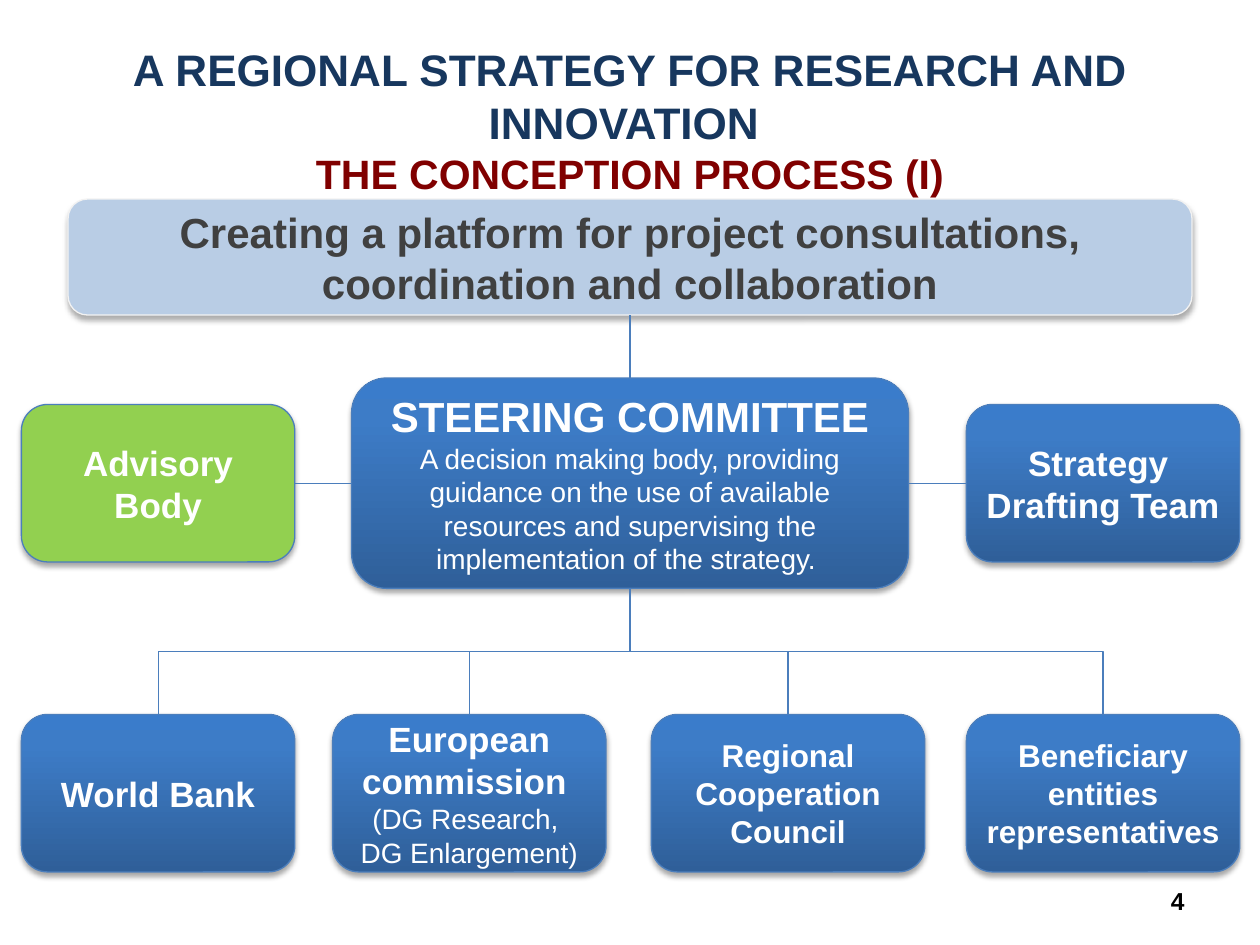
import copy

import pptx
import pptx.dml.color
import pptx.enum.shapes
import pptx.enum.text
import pptx.oxml.ns
import pptx.util
from lxml import etree

RGBColor = pptx.dml.color.RGBColor
Inches = pptx.util.Inches
Pt = pptx.util.Pt
qn = pptx.oxml.ns.qn
Align = pptx.enum.text.PP_ALIGN
Connector = pptx.enum.shapes.MSO_CONNECTOR

WHITE = RGBColor(0xFF, 0xFF, 0xFF)
BLACK = RGBColor(0, 0, 0)
NAVY = RGBColor(0x17, 0x37, 0x5E)
MAROON = RGBColor(0x80, 0, 0)
CHARCOAL = RGBColor(0x40, 0x40, 0x40)
PALE_BLUE = RGBColor(0xB9, 0xCD, 0xE5)
PALE_GREY = RGBColor(0xF2, 0xF2, 0xF2)
GREEN = RGBColor(0x92, 0xD0, 0x50)
LINE_BLUE = RGBColor(0x4B, 0x7E, 0xBC)
BLUE_STOPS = [
    (0, RGBColor(0x2F, 0x5F, 0x99)),
    (0.8, RGBColor(0x3D, 0x7C, 0xC7)),
    (1, RGBColor(0x3A, 0x7C, 0xCB)),
]

SLIDE_WIDTH, SLIDE_HEIGHT = 10, 7.5
COLUMNS = [0.17, 2.64, 5.17, 7.67]
MIDDLE_ROW, BOTTOM_ROW = 3.21, 5.67
BOX_WIDTH, BOX_HEIGHT = 2.17, 1.25
TOP, LEFT, BOTTOM, RIGHT = range(4)


def add_text(paragraph, text, size=20, color=WHITE, bold=True):
    """Append text to a paragraph; each newline becomes a line break."""
    for index, line in enumerate(text.split("\n")):
        if index:
            paragraph.add_line_break()
        if line:
            run = paragraph.add_run()
            run.text = line
            run.font.name = "Arial"
            run.font.size = Pt(size)
            run.font.bold = bold
            run.font.color.rgb = color


def first_paragraph(shape, align=Align.CENTER):
    frame = shape.text_frame
    frame.word_wrap = True
    frame.vertical_anchor = pptx.enum.text.MSO_ANCHOR.MIDDLE
    frame.paragraphs[0].alignment = align
    return frame.paragraphs[0]


def add_shadow(shape, opacity, blur, distance):
    shape.shadow.inherit = False
    effects = shape._element.spPr.find(qn("a:effectLst"))
    shadow = etree.SubElement(
        effects, qn("a:outerShdw"), blurRad=str(Pt(blur)),
        dist=str(Pt(distance)), dir="5400000", rotWithShape="0")
    color = etree.SubElement(shadow, qn("a:srgbClr"), val="000000")
    etree.SubElement(color, qn("a:alpha"), val=str(opacity * 1000))


def fill_gradient(shape):
    shape.fill.gradient()
    shape.fill.gradient_angle = 90
    stop_list = shape._element.spPr.find(".//" + qn("a:gsLst"))
    stop_list.append(copy.deepcopy(stop_list[-1]))
    for stop, (position, color) in zip(shape.fill.gradient_stops, BLUE_STOPS):
        stop.position = position
        stop.color.rgb = color


def add_box(slide, left, top, width=BOX_WIDTH, height=BOX_HEIGHT, fill=None,
            line=LINE_BLUE, shadow=(35, 3.1, 1.8)):
    """Add a rounded box, with the blue gradient unless a fill is given."""
    box = slide.shapes.add_shape(
        pptx.enum.shapes.MSO_SHAPE.ROUNDED_RECTANGLE,
        Inches(left), Inches(top), Inches(width), Inches(height))
    if fill is None:
        fill_gradient(box)
    else:
        box.fill.solid()
        box.fill.fore_color.rgb = fill
    box.line.color.rgb = line
    box.line.width = Pt(0.75)
    add_shadow(box, *shadow)
    return box


def add_label_box(slide, left, top, text, size=20, fill=None):
    box = add_box(slide, left, top, fill=fill)
    add_text(first_paragraph(box), text, size=size)
    return box


def join(slide, start, start_side, end, end_side, kind=Connector.STRAIGHT):
    connector = slide.shapes.add_connector(kind, 0, 0, 0, 0)
    connector.begin_connect(start, start_side)
    connector.end_connect(end, end_side)
    connector.line.color.rgb = LINE_BLUE
    connector.line.width = Pt(0.75)
    etree.SubElement(connector._element.spPr, qn("a:effectLst"))
    return connector


def join_down(slide, parent, child):
    """Join a parent's bottom to a child's top with a down-across-down elbow."""
    connector = join(slide, parent, BOTTOM, child, TOP, kind=Connector.ELBOW)
    start_x, start_y = connector.begin_x, connector.begin_y
    end_x, end_y = connector.end_x, connector.end_y
    drop, shift = end_y - start_y, abs(end_x - start_x)
    connector.left = (start_x + end_x - drop) // 2
    connector.top = (start_y + end_y - shift) // 2
    connector.width, connector.height = drop, shift
    transform = connector._element.spPr.find(qn("a:xfrm"))
    for flip in ("flipH", "flipV"):
        transform.attrib.pop(flip, None)
    if end_x > start_x:
        transform.set("rot", "16200000")
        transform.set("flipH", "1")
    else:
        transform.set("rot", "5400000")


def add_text_box(slide, left, top, width, height, align=Align.CENTER):
    box = slide.shapes.add_textbox(
        Inches(left), Inches(top), Inches(width), Inches(height))
    return first_paragraph(box, align)


def add_centred_box(slide, top, width, height, **style):
    return add_box(slide, (SLIDE_WIDTH - width) / 2, top, width, height, **style)


def add_steering_committee(slide):
    box = add_centred_box(slide, 3, 4.42, 1.67)
    add_text(first_paragraph(box), "STEERING COMMITTEE", size=24)
    description = box.text_frame.add_paragraph()
    description.alignment = Align.CENTER
    add_text(description, "A decision making body, providing guidance on the "
             "use of available resources and supervising the implementation "
             "of the strategy. ", size=16, bold=False)
    return box


def add_members(slide):
    bank = add_label_box(slide, COLUMNS[0], BOTTOM_ROW, "World Bank")
    commission = add_label_box(
        slide, COLUMNS[1], BOTTOM_ROW, "European commission \n")
    add_text(commission.text_frame.paragraphs[0],
             "(DG Research, \nDG Enlargement)", size=16, bold=False)
    council = add_label_box(slide, COLUMNS[2], BOTTOM_ROW,
                            "Regional Cooperation Council", size=18)
    beneficiaries = add_label_box(slide, COLUMNS[3], BOTTOM_ROW,
                                  "Beneficiary entities representatives", size=18)
    return [bank, commission, council, beneficiaries]


def main():
    presentation = pptx.Presentation()
    presentation.slide_width = Inches(SLIDE_WIDTH)
    presentation.slide_height = Inches(SLIDE_HEIGHT)
    slide = presentation.slides.add_slide(presentation.slide_layouts[6])

    banner = add_centred_box(slide, 1.58, 8.92, 0.92, fill=PALE_BLUE,
                             line=PALE_GREY, shadow=(32, 3.5, 2.2))
    add_text(first_paragraph(banner), "Creating a platform for project "
             "consultations, coordination and collaboration",
             size=24, color=CHARCOAL)

    members = add_members(slide)
    drafting_team = add_label_box(slide, COLUMNS[3], MIDDLE_ROW,
                                  "Strategy \nDrafting Team")
    advisory_body = add_label_box(slide, COLUMNS[0], MIDDLE_ROW,
                                  "Advisory Body", fill=GREEN)
    committee = add_steering_committee(slide)

    join(slide, banner, BOTTOM, committee, TOP)
    join(slide, committee, RIGHT, drafting_team, LEFT)
    join(slide, committee, LEFT, advisory_body, RIGHT)
    for member in members:
        join_down(slide, committee, member)

    title = add_text_box(slide, 0, 0.33, SLIDE_WIDTH, 1.25)
    add_text(title, "A REGIONAL STRATEGY FOR RESEARCH AND INNOVATION \n",
             size=25.2, color=NAVY)
    add_text(title, "THE CONCEPTION PROCESS (I)", size=23.4, color=MAROON)
    number = add_text_box(slide, 7.17, 6.95, 2.33, 0.4, align=Align.RIGHT)
    add_text(number, "4", size=14, color=BLACK)

    presentation.save("out.pptx")


if __name__ == "__main__":
    main()
